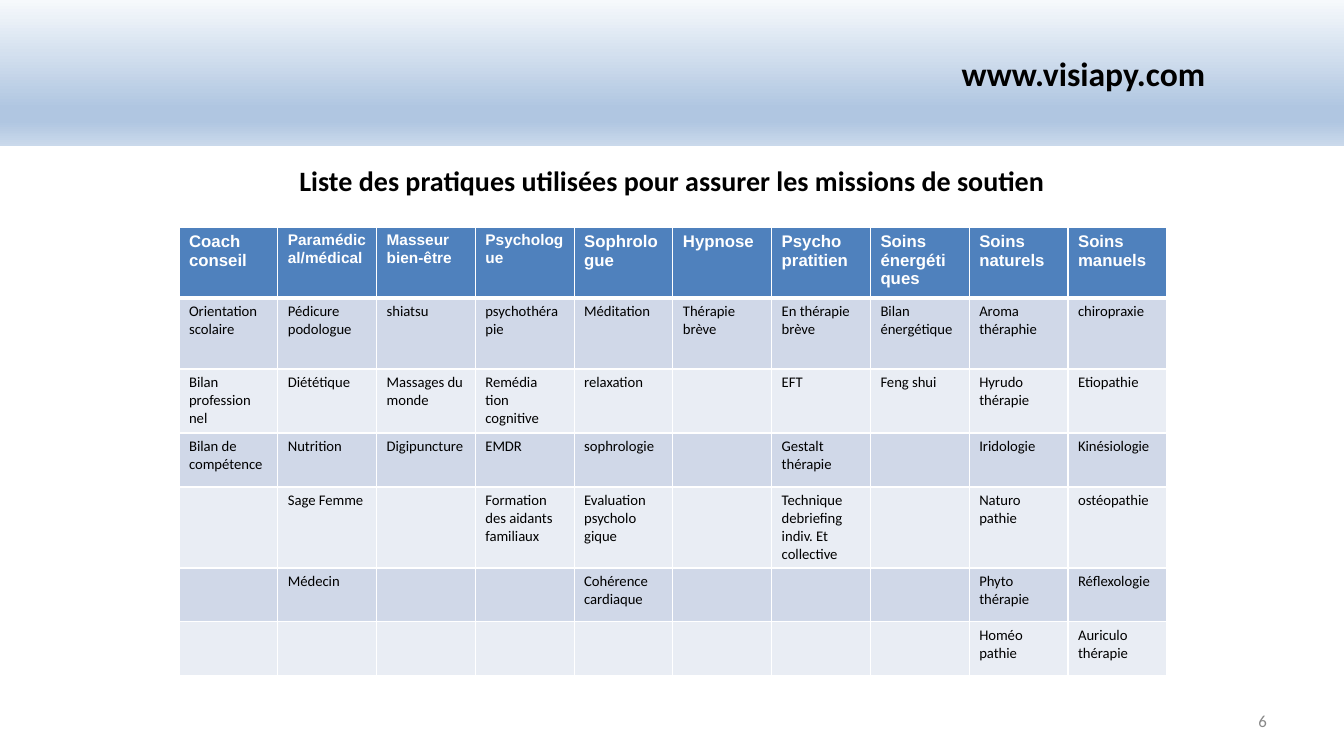
from pptx import Presentation
from pptx.dml.color import RGBColor
from pptx.enum.shapes import MSO_SHAPE
from pptx.enum.text import MSO_ANCHOR, PP_ALIGN
from pptx.oxml import parse_xml
from pptx.oxml.ns import nsdecls

UNIT = 914400 / 100.8  # EMU in one px

THEME = {
    "black": "000000", "white": "FFFFFF", "grey": "888888",
    "head": "4F81BD", "bands": ("D0D8E8", "E9EDF4"),
    "fade": ((0, "F6F9FC"), (74, "B0C6E1"), (83, "B0C6E1"), (100, "CAD9EB")),
    "body": "Calibri", "label": "Arial",
    "site": 24, "title": 20, "page": 12, "cell": 10.5,
    "heads": (12, 11, 11, 11, 12, 12, 12, 12, 12, 12),
}

# One tuple per row; a newline starts a new paragraph
ROWS = (
    ("Coach conseil", "Paramédical/médical", "Masseur bien-être", "Psychologue",
     "Sophrologue", "Hypnose", "Psycho pratitien", "Soins énergéti\nques",
     "Soins naturels", "Soins manuels"),
    ("Orientation scolaire", "Pédicure podologue", "shiatsu", "psychothérapie",
     "Méditation", "Thérapie brève", "En thérapie brève", "Bilan énergétique",
     "Aroma théraphie", "chiropraxie"),
    ("Bilan profession\nnel", "Diététique", "Massages du monde",
     "Remédia\ntion cognitive", "relaxation", "", "EFT", "Feng shui",
     "Hyrudo thérapie", "Etiopathie"),
    ("Bilan de compétence", "Nutrition", "Digipuncture", "EMDR", "sophrologie",
     "", "Gestalt thérapie", "", "Iridologie", "Kinésiologie"),
    ("", "Sage Femme", "", "Formation des aidants familiaux",
     "Evaluation psycholo\ngique", "", "Technique debriefing indiv. Et collective",
     "", "Naturo\npathie", "ostéopathie"),
    ("", "Médecin", "", "", "Cohérence cardiaque", "", "", "",
     "Phyto\nthérapie", "Réflexologie"),
    ("", "", "", "", "", "", "", "", "Homéo\npathie", "Auriculo\nthérapie"),
)
HEIGHTS = (71, 71, 64, 54, 81, 54, 54)


def px(num):
    return round(num * UNIT)


def apply(item, form):
    for name, value in form.items():
        setattr(item, name, value)


def place(shape, box):
    apply(shape, dict(zip(("left", "top", "width", "height"), map(px, box))))


def write(frame, text, size, color, face=THEME["body"], bold=False, **para):
    frame.text = text
    for line in frame.paragraphs:
        apply(line, para)
        apply(line.font, {"size": round(size * 12700), "name": face, "bold": bold})
        line.font.color.rgb = RGBColor.from_string(color)


def inset(frame, side, edge, anchor):
    apply(frame, {"word_wrap": True, "vertical_anchor": anchor,
                  "margin_left": px(side), "margin_right": px(side),
                  "margin_top": px(edge), "margin_bottom": px(edge)})


# Gradient band with the site address
def banner(slide, box):
    left, top, width, height = box
    band = slide.shapes.add_shape(MSO_SHAPE.RECTANGLE, *map(px, box))
    band.shadow.inherit = False
    band.line.fill.background()
    band.fill.gradient()
    band.fill.gradient_angle = 270
    stops = "".join(f'<a:gs pos="{pos * 1000}"><a:srgbClr val="{color}"/></a:gs>'
                    for pos, color in THEME["fade"])
    old = band.element.find(".//{*}gsLst")
    old.getparent().replace(
        old, parse_xml(f'<a:gsLst {nsdecls("a")}>{stops}</a:gsLst>'))
    site = (left + width - 459, top + 28, 397, 72)
    label(slide, site, "www.visiapy.com", THEME["site"], THEME["black"],
          MSO_ANCHOR.TOP, bold=True, alignment=PP_ALIGN.CENTER, line_spacing=1.5)


def label(slide, box, text, size, color, anchor, **form):
    frame = slide.shapes.add_textbox(*map(px, box)).text_frame
    inset(frame, 10, 5, anchor)
    write(frame, text, size, color, **form)


# Slide heading
def heading(slide, box):
    title = slide.shapes.title
    place(title, box)
    inset(title.text_frame, 10, 10, MSO_ANCHOR.MIDDLE)
    write(title.text_frame,
          "Liste des pratiques utilisées pour assurer les missions de soutien",
          THEME["title"], THEME["black"], bold=True, alignment=PP_ALIGN.CENTER)


# White cell borders, heavier between header and body
def border(cell, row):
    wide = {"T": 3 if row == 1 else 1, "B": 3 if row == 0 else 1}
    for side in "LRTB":
        cell._tc.get_or_add_tcPr().append(parse_xml(
            f'<a:ln{side} {nsdecls("a")} w="{wide.get(side, 1) * 12700}"><a:solidFill>'
            f'<a:srgbClr val="{THEME["white"]}"/></a:solidFill></a:ln{side}>'))


# Table of practices
def grid(slide, box):
    count = len(ROWS[0])
    table = slide.shapes.add_table(len(ROWS), count, *map(px, box)).table
    table.horz_banding = False
    for col in table.columns:
        col.width = px(box[2] / count)
    for r, texts in enumerate(ROWS):
        table.rows[r].height = px(HEIGHTS[r])
        fill = THEME["bands"][(r - 1) % 2] if r else THEME["head"]
        for c, text in enumerate(texts):
            cell = table.cell(r, c)
            border(cell, r)
            cell.fill.solid()
            cell.fill.fore_color.rgb = RGBColor.from_string(fill)
            if r:
                write(cell.text_frame, text, THEME["cell"], THEME["black"])
            else:
                write(cell.text_frame, text, THEME["heads"][c], THEME["white"],
                      THEME["label"], True)


def main():
    deck = Presentation()
    apply(deck, {"slide_width": px(1344), "slide_height": px(756)})
    slide = deck.slides.add_slide(deck.slide_layouts[5])
    banner(slide, (0, 0, 1344, 146))
    heading(slide, (168, 148, 1008, 64))
    grid(slide, (179, 227, 988, sum(HEIGHTS)))
    # Page number
    label(slide, (964, 701, 313, 40), "6", THEME["page"], THEME["grey"],
          MSO_ANCHOR.MIDDLE, alignment=PP_ALIGN.RIGHT)
    deck.save("out.pptx")


if __name__ == "__main__":
    main()
